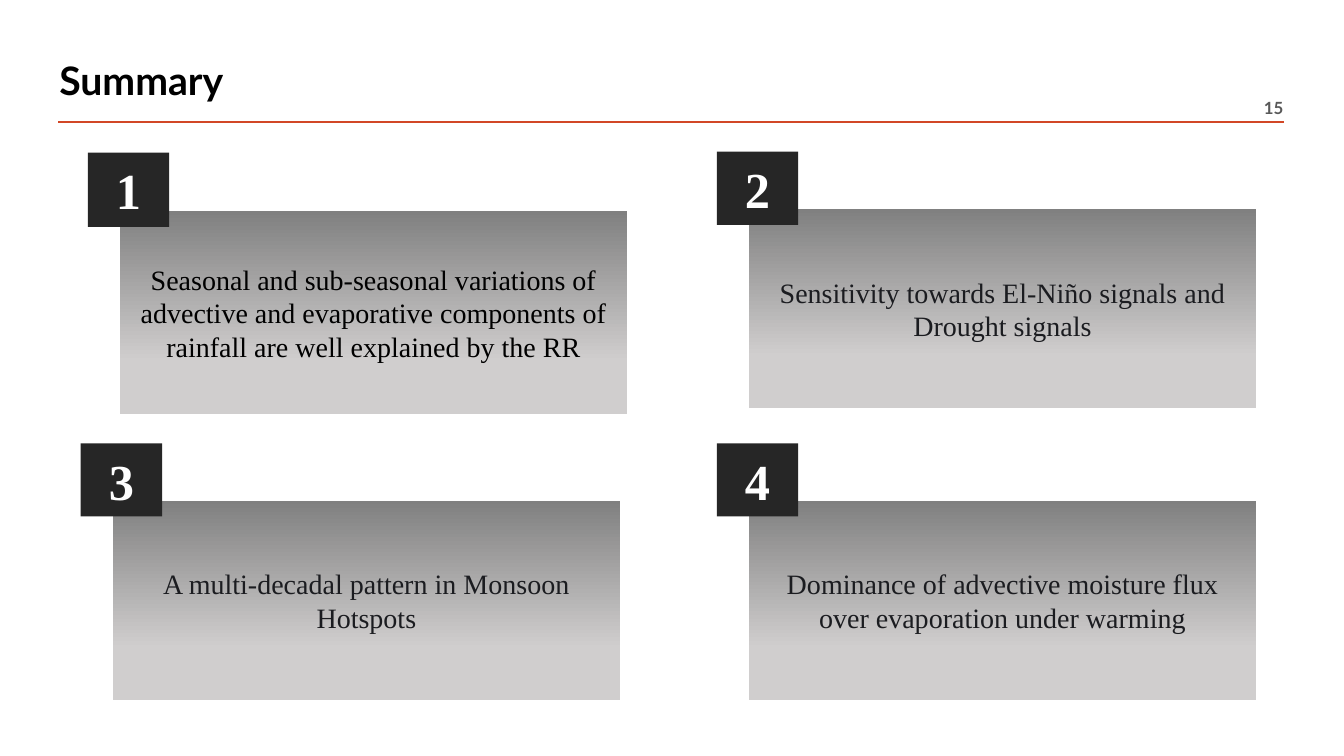
"""Build the Summary slide: four numbered findings on gradient panels."""
from pptx import Presentation
from pptx import util as u
from pptx.dml import color
from pptx.enum import shapes, text
from pptx.oxml import xmlchemy

TITLE = ("Summary", (35.3, 33.8, 737.3, 50.4), 28, "000000")
PAGE_NUMBER = ("15", (895.7, 66.2, 29.5, 20.9), 12, "595959")
RULE = (41.8, 917.3, 87.1)
FINDINGS = [
    {"text": "Seasonal and sub-seasonal variations of advective and evaporative "
             "components of rainfall are well explained by the RR",
     "at": (62.7, 109), "badge_height": 53.1, "panel_height": 145.2, "ink": "000000"},
    {"text": "Sensitivity towards El-Niño signals and Drought signals",
     "at": (512, 108.4), "badge_height": 52.2, "panel_height": 142.6, "ink": "1B1C20"},
    {"text": "A multi-decadal pattern in Monsoon Hotspots",
     "at": (57.6, 316.7), "badge_height": 52.2, "panel_height": 142.6, "ink": "1B1C20"},
    {"text": "Dominance of advective moisture flux over evaporation under warming",
     "at": (512, 316.7), "badge_height": 52.2, "panel_height": 142.6, "ink": "1B1C20"},
]
BADGE_WIDTH, PANEL_WIDTH = 58.2, 362
PANEL_SHIFT, BADGE_OVERLAP = 23.1, 11.4
PANEL_STOPS = [(0, "808080"), (0.74, "D0CECE")]
HEADING_FONT, BODY_FONT = "Lato", "Times New Roman"


def rgb(value):
    """Turn a hex string into a colour."""
    return color.RGBColor.from_string(value)


def write(shape, words, size, ink, font, bold=False, align=None):
    """Put one formatted, vertically centred paragraph in a shape."""
    frame = shape.text_frame
    frame.word_wrap = True
    frame.vertical_anchor = text.MSO_ANCHOR.MIDDLE
    frame.text = words
    para = frame.paragraphs[0]
    para.alignment = align
    span = para.runs[0].font
    span.name, span.size, span.bold = font, u.Pt(size), bold
    span.color.rgb = rgb(ink)
    return para


def add_label(page, words, place, size, ink):
    """Add a bold heading-font text box."""
    box = page.shapes.add_textbox(*map(u.Pt, place))
    return write(box, words, size, ink, HEADING_FONT, bold=True)


def add_rectangle(group, *place):
    """Add a rectangle without outline or shadow."""
    box = group.shapes.add_shape(shapes.MSO_SHAPE.RECTANGLE, *map(u.Pt, place))
    box.shadow.inherit = False
    box.line.fill.background()
    return box


def add_finding(page, number, finding):
    """Add a panel with its number badge overlapping the top left corner."""
    left, top = finding["at"]
    badge_height = finding["badge_height"]
    group = page.shapes.add_group_shape()

    panel = add_rectangle(group, left + PANEL_SHIFT, top + badge_height - BADGE_OVERLAP,
                          PANEL_WIDTH, finding["panel_height"])
    panel.fill.gradient()
    panel.fill.gradient_angle = 270
    for stop, (position, shade) in zip(panel.fill.gradient_stops, PANEL_STOPS):
        stop.position, stop.color.rgb = position, rgb(shade)
    write(panel, finding["text"], 20, finding["ink"], BODY_FONT,
          align=text.PP_ALIGN.CENTER)

    badge = add_rectangle(group, left, top, BADGE_WIDTH, badge_height)
    badge.fill.solid()
    badge.fill.fore_color.rgb = rgb("262626")
    write(badge, str(number), 36, "FFFFFF", BODY_FONT, bold=True,
          align=text.PP_ALIGN.CENTER)


def add_rule(page):
    """Draw the line below the title."""
    start, end, height = map(u.Pt, RULE)
    rule = page.shapes.add_connector(shapes.MSO_CONNECTOR.STRAIGHT,
                                     start, height, end, height)
    rule.line.color.rgb = rgb("D24726")
    rule.line.width = u.Pt(2)
    properties = rule.line._get_or_add_ln().getparent()
    properties.append(xmlchemy.OxmlElement("a:effectLst"))


def main():
    """Assemble and save the deck."""
    deck = Presentation()
    deck.slide_width, deck.slide_height = u.Pt(960), u.Pt(540)
    page = deck.slides.add_slide(deck.slide_layouts[6])
    add_rule(page)
    add_label(page, *PAGE_NUMBER)
    add_label(page, *TITLE).line_spacing = 0.9
    for number, finding in enumerate(FINDINGS, 1):
        add_finding(page, number, finding)
    deck.save("out.pptx")


if __name__ == "__main__":
    main()
